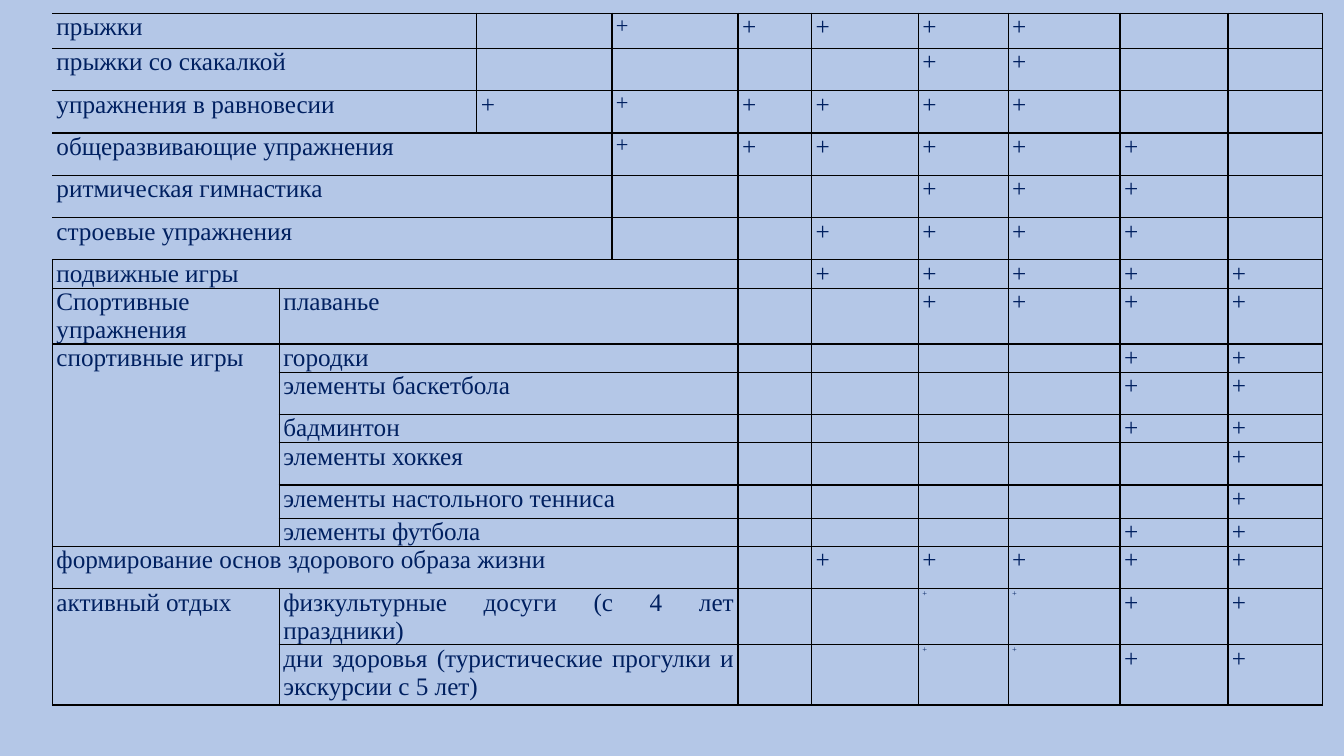
"""Build a slide with a table of physical activities by age group."""
from typing import NamedTuple
from lxml import etree
from pptx import Presentation, util as u
from pptx.dml.color import RGBColor
from pptx.enum import text as t
from pptx.oxml import ns

HUES = {"back": "B4C7E7", "ink": "002060", "line": "000000"}
FONT = "Times New Roman"
SIZES = {"+": 18, "m": 16, "s": 6}
COLS = [2.25, 1.96, 1.34, 1.25, 0.73, 1.06, 0.89, 1.11, 1.07, 0.94]
FIRST = 2
PLAIN = "{2D5ABB26-0587-4C30-8999-92F81FD0307C}"


class Row(NamedTuple):
    high: float
    label: str
    start: int
    span: int
    marks: str


class Group(NamedTuple):
    label: str
    top: int
    span: int


ROWS = [
    Row(0.35, "прыжки", 0, 2, ".m++++.."),
    Row(0.42, "прыжки со скакалкой", 0, 2, "....++.."),
    Row(0.42, "упражнения в равновесии", 0, 2, "+m++++.."),
    Row(0.42, "общеразвивающие упражнения", 0, 3, ".m+++++."),
    Row(0.42, "ритмическая гимнастика", 0, 3, "....+++."),
    Row(0.42, "строевые упражнения", 0, 3, "...++++."),
    Row(0.28, "подвижные игры", 0, 4, "...+++++"),
    Row(0.55, "плаванье", 1, 3, "....++++"),
    Row(0.28, "городки", 1, 3, "......++"),
    Row(0.42, "элементы баскетбола", 1, 3, "......++"),
    Row(0.28, "бадминтон", 1, 3, "......++"),
    Row(0.42, "элементы хоккея", 1, 3, ".......+"),
    Row(0.33, "элементы настольного тенниса", 1, 3, ".......+"),
    Row(0.28, "элементы футбола", 1, 3, "......++"),
    Row(0.42, "формирование основ здорового образа жизни", 0, 4, "...+++++"),
    Row(0.55, "физкультурные досуги (с 4 лет праздники)", 1, 3, "....ss++"),
    Row(0.6, "дни здоровья (туристические прогулки и экскурсии с 5 лет)",
        1, 3, "....ss++"),
]
GROUPS = [
    Group("Спортивные упражнения", 7, 1),
    Group("спортивные игры", 8, 6),
    Group("активный отдых", 15, 2),
]
OPEN = 6


def write(cell, words: str, size: int = 18) -> None:
    """Put one justified run into a cell."""
    para = cell.text_frame.paragraphs[0]
    para.alignment = t.PP_ALIGN.JUSTIFY
    run = para.add_run()
    run.text = words
    run.font.name = FONT
    run.font.size = u.Pt(size)
    run.font.color.rgb = RGBColor.from_string(HUES["ink"])


def edge(cell, sides: str) -> None:
    """Draw the named sides of a cell and clear the others."""
    props = cell._tc.get_or_add_tcPr()
    for spot, side in enumerate("LRTB"):
        line = etree.Element(ns.qn(f"a:ln{side}"), w=str(u.Pt(1)))
        if side in sides:
            fill = etree.SubElement(line, ns.qn("a:solidFill"))
            etree.SubElement(fill, ns.qn("a:srgbClr"), val=HUES["line"])
        else:
            etree.SubElement(line, ns.qn("a:noFill"))
        props.insert(spot, line)


def dress(cell, sides: str) -> None:
    """Set the margins, fill, edges and empty text size of a cell."""
    cell.margin_left = cell.margin_right = u.Inches(0.04)
    cell.margin_top = cell.margin_bottom = 0
    cell.fill.background()
    if not cell.is_spanned:
        edge(cell, sides)
    if not cell.text_frame.text:
        para = cell.text_frame.paragraphs[0]._p
        etree.SubElement(para, ns.qn("a:endParaRPr"), sz="600")


def fill_row(grid, num: int, row: Row) -> None:
    """Write the label and the marks of one row."""
    grid.rows[num].height = u.Inches(row.high)
    head = grid.cell(num, row.start)
    head.merge(grid.cell(num, row.start + row.span - 1))
    write(head, row.label)
    for col, mark in enumerate(row.marks, FIRST):
        if mark in SIZES:
            write(grid.cell(num, col), "+", SIZES[mark])


def main() -> None:
    """Make the deck and save it."""
    deck = Presentation()
    deck.slide_width, deck.slide_height = u.Inches(13.33), u.Inches(7.5)
    slide = deck.slides.add_slide(deck.slide_layouts[6])
    back = slide.background.fill
    back.solid()
    back.fore_color.rgb = RGBColor.from_string(HUES["back"])

    grid = slide.shapes.add_table(
        len(ROWS), len(COLS), u.Inches(0.52), u.Inches(0.13),
        u.Inches(sum(COLS)), u.Inches(sum(r.high for r in ROWS))).table
    grid.first_row = grid.horz_banding = False
    grid._tbl.tblPr.find(ns.qn("a:tableStyleId")).text = PLAIN
    for col, wide in zip(grid.columns, COLS):
        col.width = u.Inches(wide)
    for num, row in enumerate(ROWS):
        fill_row(grid, num, row)
    for group in GROUPS:
        head = grid.cell(group.top, 0)
        if group.span > 1:
            head.merge(grid.cell(group.top + group.span - 1, 0))
        write(head, group.label)
    for num in range(len(ROWS)):
        for col in range(len(COLS)):
            bare = col == 0 and num < OPEN
            dress(grid.cell(num, col), "RTB" if bare else "LRTB")
    deck.save("out.pptx")


if __name__ == "__main__":
    main()
